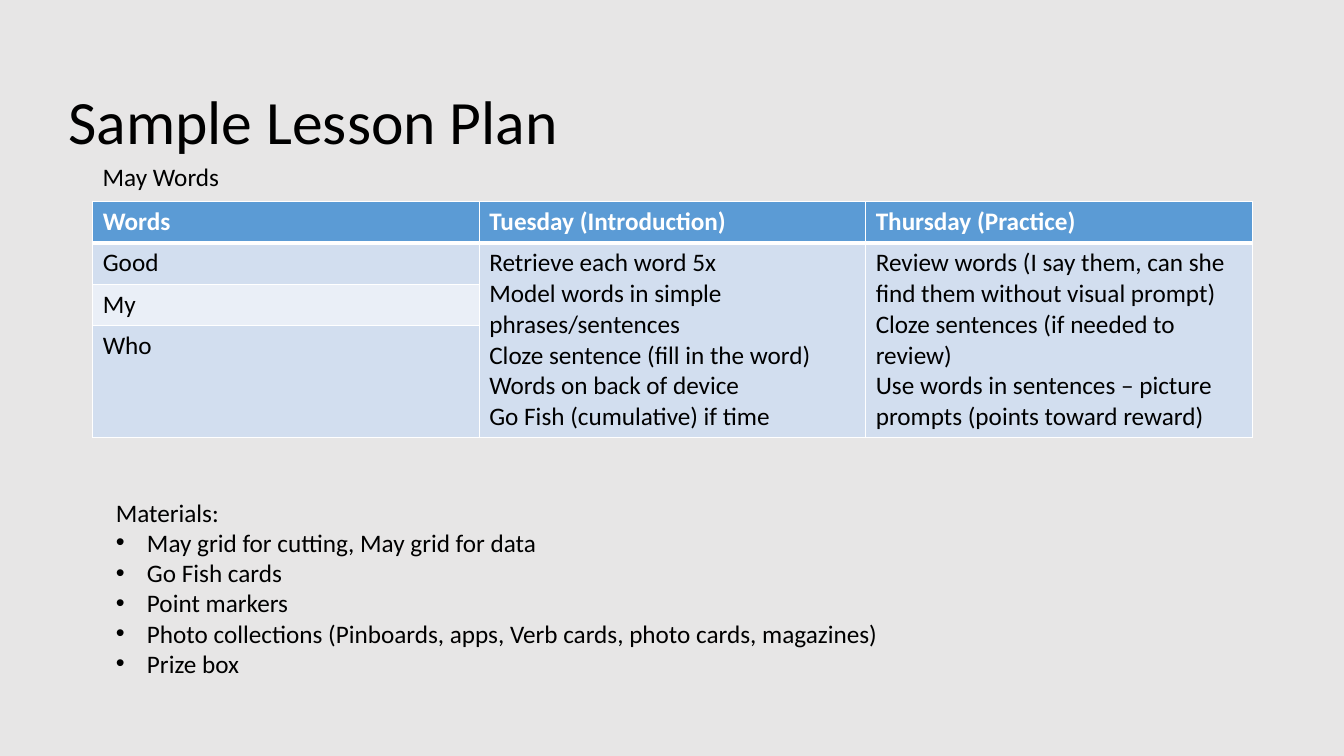
from dataclasses import dataclass

import pptx
import pptx.dml.color
import pptx.enum.text
import pptx.oxml.ns
import pptx.util
from lxml import etree


@dataclass(frozen=True)
class Theme:
    font: str = "Calibri"
    title_size: int = 44
    body_size: int = 18
    ink: str = "000000"
    page: str = "E7E6E6"
    white: str = "FFFFFF"
    header: str = "5B9BD5"
    bands: tuple = ("D2DEEF", "EAEFF7")


@dataclass(frozen=True)
class Box:
    left: float
    top: float
    width: float
    height: float

    def lengths(self):
        return [pptx.util.Inches(n) for n in (self.left, self.top, self.width, self.height)]


THEME = Theme()
PAGE_WIDTH, PAGE_HEIGHT = 13.33, 7.5
CONTENT_LEFT, CONTENT_WIDTH = 0.92, 11.5
TITLE_BOX = Box(0.58, 0.51, CONTENT_WIDTH, 1.45)
CAPTION_BOX = Box(CONTENT_LEFT, 1.55, CONTENT_WIDTH, 0.4)
PLAN_BOX = Box(CONTENT_LEFT, 2, CONTENT_WIDTH, 2.33)
MATERIALS_BOX = Box(1.05, 4.88, 11.37, 1.92)
ROW_HEIGHT = 0.41
BULLET_INDENT = 0.31

HEADINGS = ["Words", "Tuesday (Introduction)", "Thursday (Practice)"]
WORDS = ["Good", "My", "Who"]
ACTIVITIES = [
    [
        "Retrieve each word 5x",
        "Model words in simple phrases/sentences",
        "Cloze sentence (fill in the word)",
        "Words on back of device",
        "Go Fish (cumulative) if time",
    ],
    [
        "Review words (I say them, can she find them without visual prompt)",
        "Cloze sentences (if needed to review)",
        "Use words in sentences – picture prompts (points toward reward)",
    ],
]
MATERIALS = [
    "May grid for cutting, May grid for data",
    "Go Fish cards",
    "Point markers",
    "Photo collections (Pinboards, apps, Verb cards, photo cards, magazines)",
    "Prize box",
]


def rgb(color):
    return pptx.dml.color.RGBColor.from_string(color)


def add_child(parent, tag, **attributes):
    return etree.SubElement(parent, pptx.oxml.ns.qn(tag), attributes)


def add_bullet(para):
    indent = pptx.util.Inches(BULLET_INDENT)
    properties = para._p.get_or_add_pPr()
    properties.set("marL", str(indent))
    properties.set("indent", str(-indent))
    add_child(properties, "a:buFont", typeface="Arial")
    add_child(properties, "a:buChar", char="•")


def write_text(frame, lines, size=THEME.body_size, color=THEME.ink, bold=False,
               spacing=None, bullets_from=None):
    """Write one paragraph per line, with bullets from the given index on."""
    frame.word_wrap = True
    for index, line in enumerate(lines):
        para = frame.paragraphs[0] if index == 0 else frame.add_paragraph()
        para.alignment = pptx.enum.text.PP_ALIGN.LEFT
        if spacing is not None:
            para.line_spacing = spacing
        if bullets_from is not None and index >= bullets_from:
            add_bullet(para)
        span = para.add_run()
        span.text = line
        span.font.name = THEME.font
        span.font.size = pptx.util.Pt(size)
        span.font.bold = bold
        span.font.color.rgb = rgb(color)


def place_title(slide, box, text):
    title = slide.shapes.title
    title.left, title.top, title.width, title.height = box.lengths()
    title.text_frame.auto_size = pptx.enum.text.MSO_AUTO_SIZE.NONE
    title.text_frame.vertical_anchor = pptx.enum.text.MSO_ANCHOR.MIDDLE
    write_text(title.text_frame, [text], size=THEME.title_size, spacing=0.9)


def place_text(slide, box, lines, **text_format):
    frame = slide.shapes.add_textbox(*box.lengths()).text_frame
    write_text(frame, lines, **text_format)
    frame.auto_size = pptx.enum.text.MSO_AUTO_SIZE.SHAPE_TO_FIT_TEXT


def paint_cell(cell, fill, bottom_width=1, top_width=1):
    """Add the white borders first, since the fill must follow them."""
    properties = cell._tc.get_or_add_tcPr()
    for side, width in (("L", 1), ("R", 1), ("T", top_width), ("B", bottom_width)):
        line = add_child(properties, f"a:ln{side}", w=str(pptx.util.Pt(width)))
        add_child(add_child(line, "a:solidFill"), "a:srgbClr", val=THEME.white)
    cell.fill.solid()
    cell.fill.fore_color.rgb = rgb(fill)


def place_plan(slide, box):
    row_count, column_count = len(WORDS) + 1, len(HEADINGS)
    table = slide.shapes.add_table(row_count, column_count, *box.lengths()).table
    for column in table.columns:
        column.width = pptx.util.Inches(box.width / column_count)
    for row in table.rows:
        row.height = pptx.util.Inches(ROW_HEIGHT)
    last_height = box.height - ROW_HEIGHT * (row_count - 1)
    table.rows[row_count - 1].height = pptx.util.Inches(last_height)

    for column, heading in enumerate(HEADINGS):
        cell = table.cell(0, column)
        paint_cell(cell, THEME.header, bottom_width=3)
        write_text(cell.text_frame, [heading], color=THEME.white, bold=True)
        for row in range(1, row_count):
            band = THEME.bands[(row - 1) % len(THEME.bands)]
            paint_cell(table.cell(row, column), band, top_width=3 if row == 1 else 1)

    for row, word in enumerate(WORDS, start=1):
        write_text(table.cell(row, 0).text_frame, [word])
    for column, activities in enumerate(ACTIVITIES, start=1):
        table.cell(1, column).merge(table.cell(row_count - 1, column))
        write_text(table.cell(1, column).text_frame, activities)


def build_lesson_slide(deck):
    slide = deck.slides.add_slide(deck.slide_layouts.get_by_name("Title Only"))
    slide.background.fill.solid()
    slide.background.fill.fore_color.rgb = rgb(THEME.page)
    place_title(slide, TITLE_BOX, "Sample Lesson Plan")
    place_plan(slide, PLAN_BOX)
    place_text(slide, CAPTION_BOX, ["May Words"])
    place_text(slide, MATERIALS_BOX, ["Materials:", *MATERIALS], bullets_from=1)


def main():
    deck = pptx.Presentation()
    deck.slide_width = pptx.util.Inches(PAGE_WIDTH)
    deck.slide_height = pptx.util.Inches(PAGE_HEIGHT)
    build_lesson_slide(deck)
    deck.save("out.pptx")


if __name__ == "__main__":
    main()
